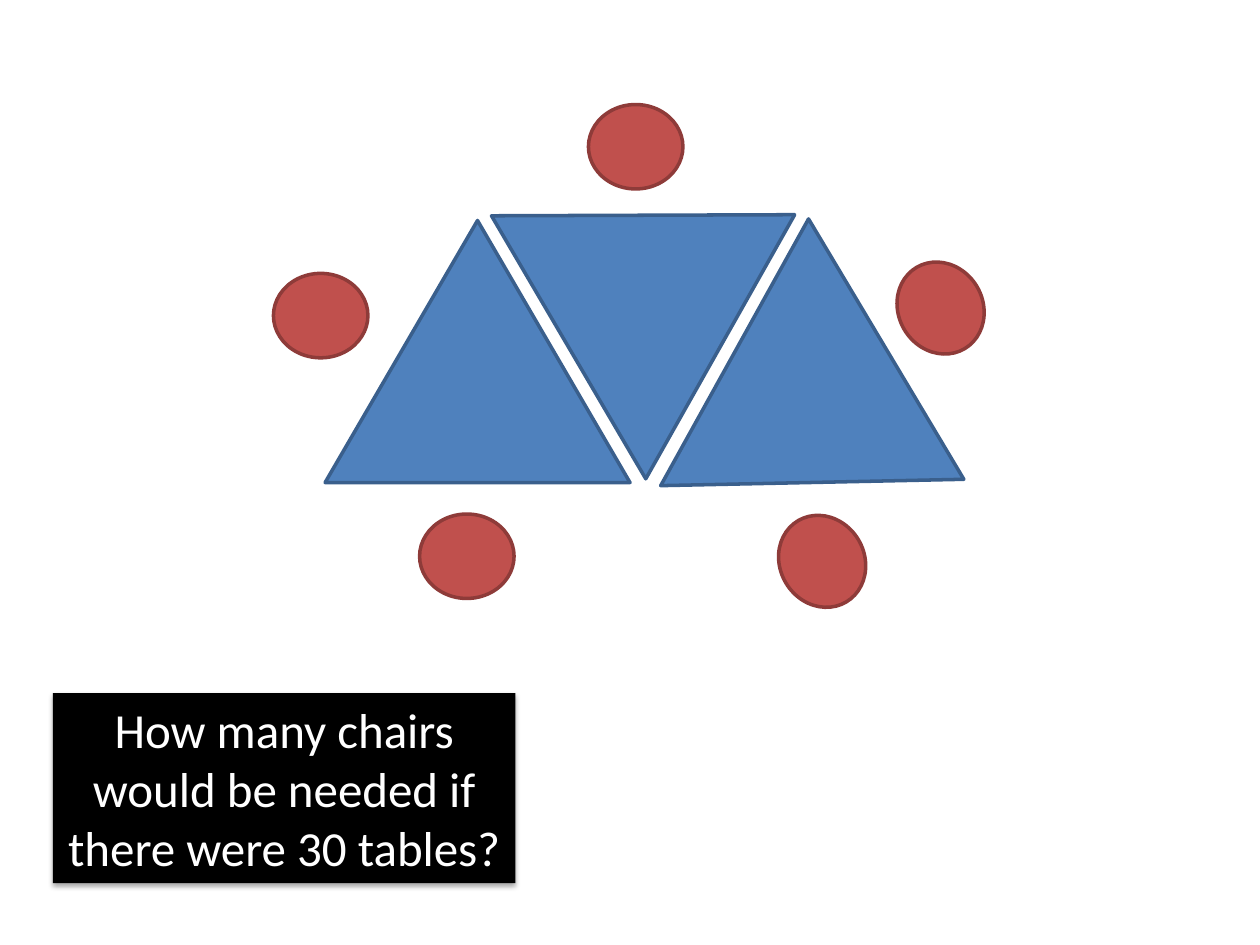
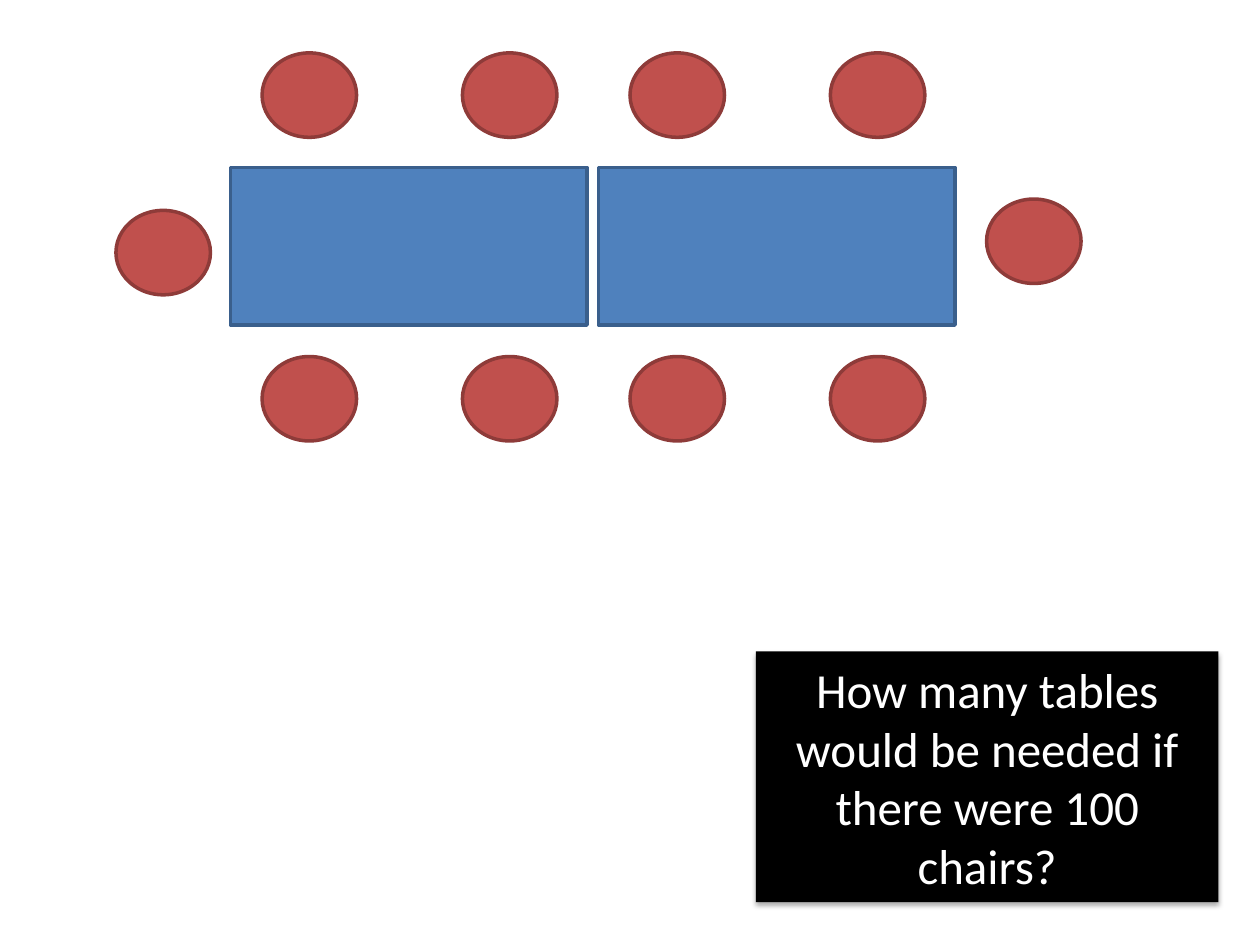
from itertools import product

from lxml import etree
from pptx import Presentation
from pptx import util as u
from pptx.dml.color import RGBColor
from pptx.enum import shapes, text
from pptx.oxml import ns

# Theme: colours, type and sizes shared by both slides
theme = {
    "table": ("4F81BD", "3A5F8C"),
    "chair": ("C0504D", "8E3B39"),
    "box": ("000000", None),
    "ink": "FFFFFF",
    "font": {"name": "Calibri", "size": u.Pt(28)},
    "edge": u.Pt(2),
    "seat": (0.75, 0.67),
    "desk": (2.83, 1.25),
    "wedge": (2.42, 2.08),
    "note": 3.67,
}
kinds = shapes.MSO_SHAPE


def draw(page, kind, role, spot, size, turn=0):
    """Add a flat shape in the colours of its role."""
    item = page.shapes.add_shape(kind, *map(u.Inches, spot + size))
    item.rotation = turn
    item.shadow.inherit = False
    fill, line = theme[role]
    item.fill.solid()
    item.fill.fore_color.rgb = RGBColor.from_string(fill)
    if line:
        item.line.color.rgb = RGBColor.from_string(line)
        item.line.width = theme["edge"]
    else:
        item.line.fill.background()
    return item


def ask(page, words, spot, high):
    """Add a black question box with a soft shadow below it."""
    box = draw(page, kinds.RECTANGLE, "box", spot, (theme["note"], high))
    glow = box._element.spPr.find(ns.qn("a:effectLst"))
    shade = etree.SubElement(glow, ns.qn("a:outerShdw"), blurRad=str(u.Pt(3.1)),
                             dist=str(u.Pt(1.8)), dir="5400000", rotWithShape="0")
    tone = etree.SubElement(shade, ns.qn("a:srgbClr"), val="000000")
    etree.SubElement(tone, ns.qn("a:alpha"), val="35000")

    frame = box.text_frame
    frame.word_wrap = True
    frame.auto_size = text.MSO_AUTO_SIZE.SHAPE_TO_FIT_TEXT
    para = frame.paragraphs[0]
    para.alignment = text.PP_ALIGN.CENTER
    run = para.add_run()
    run.text = words
    for key, val in theme["font"].items():
        setattr(run.font, key, val)
    run.font.color.rgb = RGBColor.from_string(theme["ink"])


deck = Presentation()
deck.slide_width, deck.slide_height = u.Inches(10), u.Inches(7.5)
blank = deck.slide_layouts[6]

# Slide 1: three triangle tables, five chairs
page = deck.slides.add_slide(blank)
for left, top, turn in [(2.58, 1.75, 0), (4.2, 1.19, 59.6), (5.53, 2.26, 119)]:
    draw(page, kinds.ISOSCELES_TRIANGLE, "table", (left, top), theme["wedge"], turn)
for left, top, turn in [(2.17, 2.17, 0), (3.33, 4.08, 0), (4.67, 0.83, 0),
                        (7.09, 2.11, 59.4), (6.15, 4.12, 59.4)]:
    draw(page, kinds.OVAL, "chair", (left, top), theme["seat"], turn)
ask(page, "How many chairs would be needed if there were 30 tables?", (0.42, 5.5), 1.51)

# Slide 2: two long tables, chairs above and below each, one at either end
page = deck.slides.add_slide(blank)
desks = (1.83, 4.75)
for left in desks:
    draw(page, kinds.RECTANGLE, "table", (left, 1.33), theme["desk"])
seats = [(left + step, top)
         for top, left, step in product((0.42, 2.83), desks, (0.25, 1.84))]
for spot in seats + [(0.92, 1.67), (7.83, 1.58)]:
    draw(page, kinds.OVAL, "chair", spot, theme["seat"])
ask(page, "How many tables would be needed if there were 100 chairs?", (6, 5.17), 1.99)

deck.save("out.pptx")
